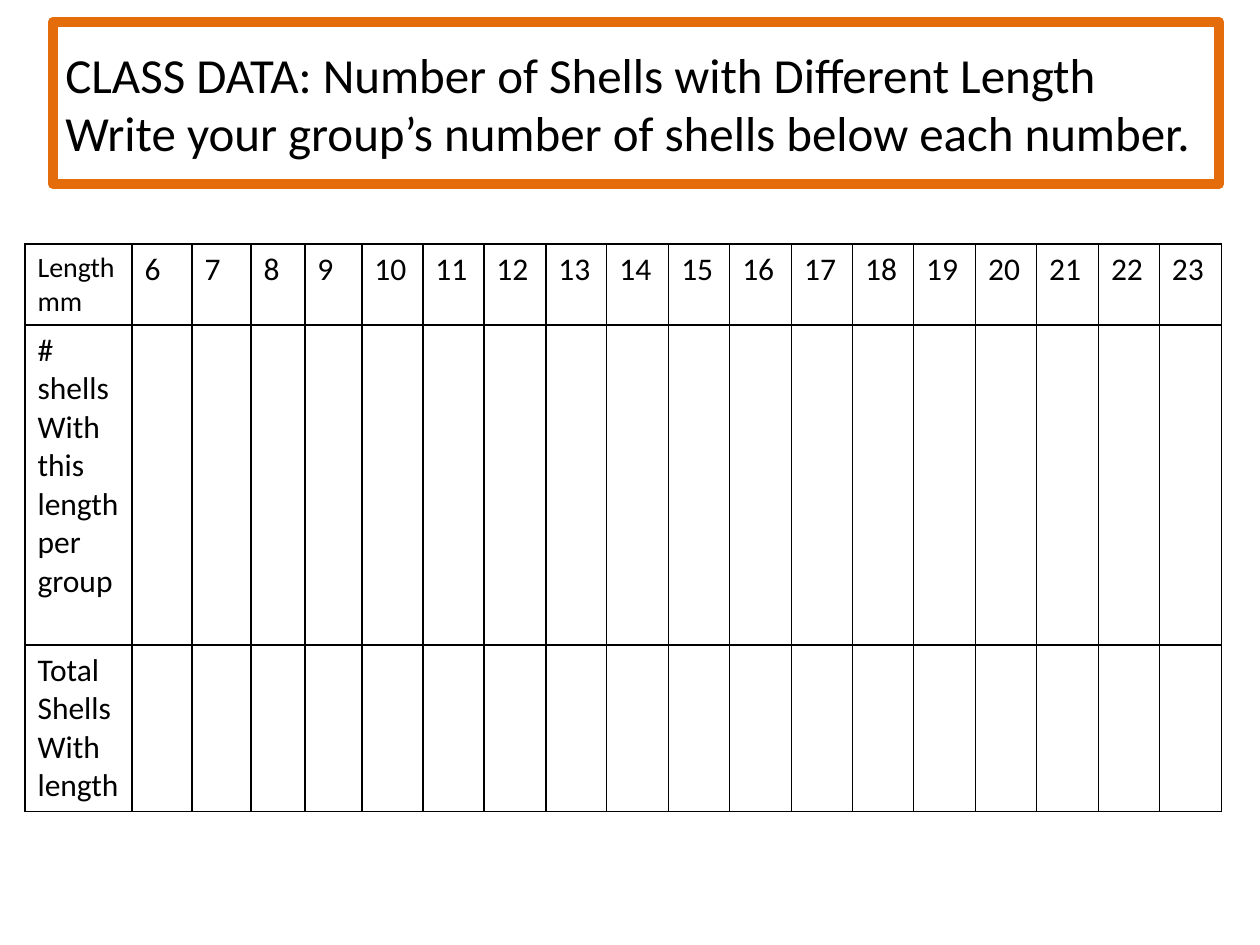
from dataclasses import dataclass

from lxml.etree import SubElement
from pptx import Presentation
from pptx.dml.color import RGBColor
from pptx.enum.shapes import MSO_SHAPE as Preset
from pptx.enum.text import MSO_ANCHOR as Anchor, PP_ALIGN as Align
from pptx.oxml.ns import qn
from pptx.util import Pt

PX = 914400 / 126


@dataclass(frozen=True)
class Theme:
    """Colours, font and sizes in points."""

    ink: RGBColor = RGBColor(0x00, 0x00, 0x00)
    paper: RGBColor = RGBColor(0xFF, 0xFF, 0xFF)
    frame: RGBColor = RGBColor(0xE4, 0x6C, 0x0A)
    font: str = "Calibri"
    heading: int = 28
    body: int = 18
    small: int = 16
    frame_width: int = 6
    grid_width: int = 1


THEME = Theme()
HEADING = (
    "CLASS DATA: Number of Shells with Different Length \v"
    "Write your group’s number of shells below each number."
)
LENGTHS = range(6, 24)
ROW_LABELS = (
    "Length mm",
    "# shells\nWith this length\nper\ngroup",
    "Total\nShells\nWith\nlength",
)
ROW_HEIGHTS = (81, 320, 166)
LEADING_WIDTHS = (107, 60, 59, 54, 57)


def emu(px):
    """Turn px into EMU."""
    return round(px * PX)


def style_text(frame, size):
    """Format every run of a text frame."""
    for paragraph in frame.paragraphs:
        paragraph.alignment = Align.LEFT
        for run in paragraph.runs:
            run.font.name = THEME.font
            run.font.size = Pt(size)
            run.font.color.rgb = THEME.ink


def draw_grid_lines(cell):
    """Give a cell its four borders, then its fill."""
    properties = cell._tc.get_or_add_tcPr()
    for side in ("lnL", "lnR", "lnT", "lnB"):
        border = SubElement(properties, qn(f"a:{side}"), w=str(Pt(THEME.grid_width)))
        solid = SubElement(border, qn("a:solidFill"))
        SubElement(solid, qn("a:srgbClr"), val=str(THEME.ink))
    cell.fill.solid()
    cell.fill.fore_color.rgb = THEME.paper


def add_heading(slide, left, top, width, height):
    """Place the framed heading in its box."""
    heading = slide.shapes.add_shape(
        Preset.RECTANGLE, *map(emu, (left, top, width, height))
    )
    heading.shadow.inherit = False
    heading.fill.background()
    heading.line.color.rgb = THEME.frame
    heading.line.width = Pt(THEME.frame_width)
    SubElement(heading.line._ln, qn("a:round"))
    frame = heading.text_frame
    frame.word_wrap = True
    frame.vertical_anchor = Anchor.MIDDLE
    frame.text = HEADING
    style_text(frame, THEME.heading)


def column_widths(width):
    """Share what the leading columns leave equally among the others."""
    others = len(LENGTHS) + 1 - len(LEADING_WIDTHS)
    rest = width - sum(LEADING_WIDTHS)
    edges = [rest * i // others for i in range(others + 1)]
    return [*LEADING_WIDTHS, *(b - a for a, b in zip(edges, edges[1:]))]


def add_tally(slide, left, top, width, height):
    """Place the table of shell counts in its box."""
    tally = slide.shapes.add_table(
        len(ROW_LABELS), len(LENGTHS) + 1, *map(emu, (left, top, width, height))
    ).table
    tally.first_row = tally.horz_banding = False
    for column, column_width in zip(tally.columns, column_widths(width)):
        column.width = emu(column_width)
    for row, row_height in zip(tally.rows, ROW_HEIGHTS):
        row.height = emu(row_height)
    for row, label in enumerate(ROW_LABELS):
        tally.cell(row, 0).text_frame.text = label
    for column, length in enumerate(LENGTHS, 1):
        tally.cell(0, column).text_frame.text = str(length)
    for cell in tally.iter_cells():
        style_text(cell.text_frame, THEME.body)
        draw_grid_lines(cell)
    style_text(tally.cell(0, 0).text_frame, THEME.small)


def main():
    """Build and save the slide."""
    deck = Presentation()
    deck.slide_width, deck.slide_height = emu(1260), emu(945)
    slide = deck.slides.add_slide(deck.slide_layouts[6])
    add_heading(slide, 53, 22, 1166, 162)
    add_tally(slide, 25, 244, 1197, sum(ROW_HEIGHTS))
    deck.save("out.pptx")


if __name__ == "__main__":
    main()
